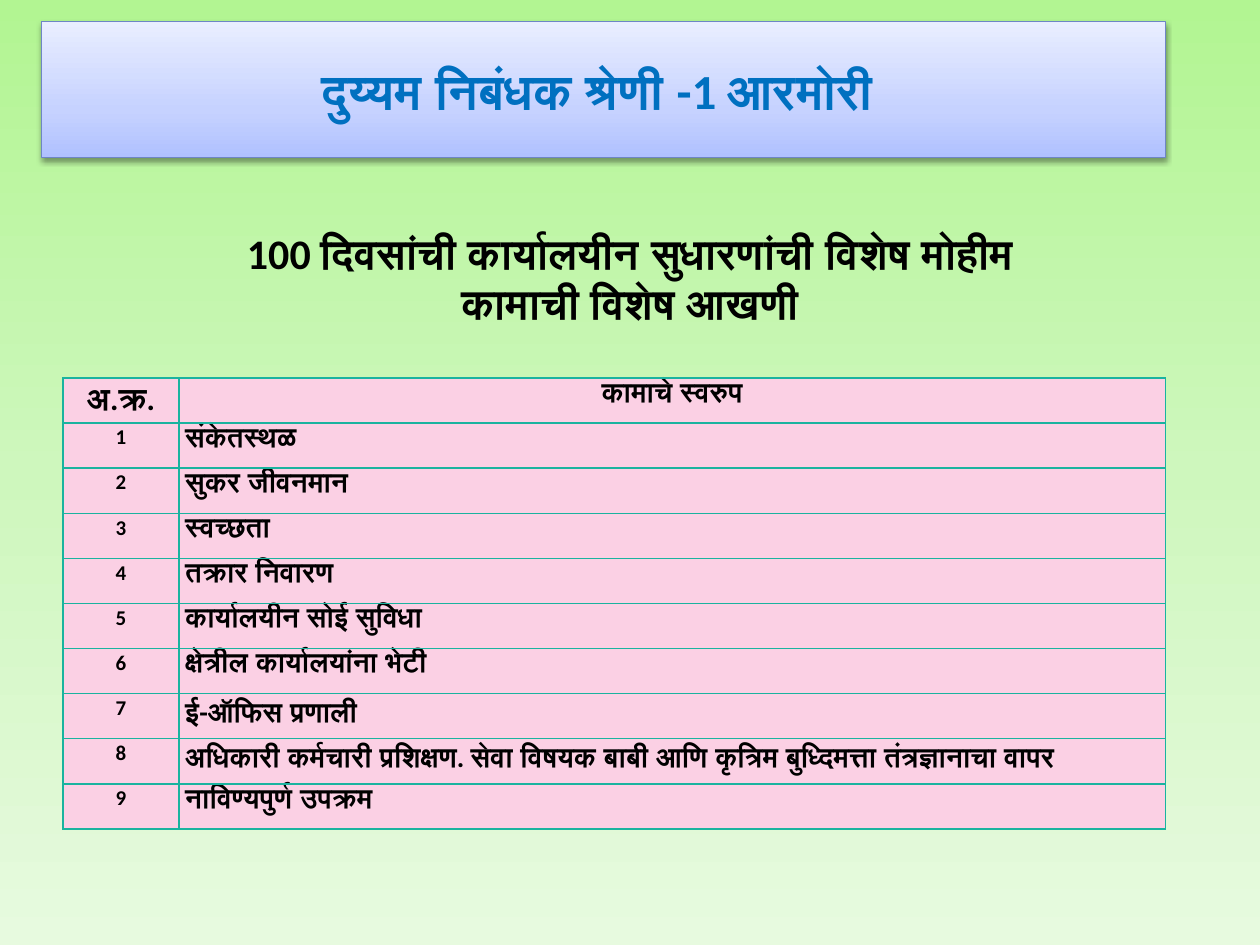
import pptx
import pptx.util
import pptx.dml.color
import pptx.enum.text
import pptx.oxml
import pptx.oxml.ns
from dataclasses import dataclass

Inches = pptx.util.Inches
Pt = pptx.util.Pt
ALIGN = pptx.enum.text.PP_ALIGN
ANCHOR = pptx.enum.text.MSO_ANCHOR
FIT = pptx.enum.text.MSO_AUTO_SIZE


@dataclass(frozen=True)
class Theme:
    """Hold the colours, font and type sizes."""
    font: str = "Calibri"
    ink: str = "000000"
    blue: str = "0070C0"
    edge: str = "6E86C6"
    rule: str = "1AB39F"
    pink: str = "FBD0E4"
    back: tuple = ((0, "B2F592"), (50, "CEF7BD"), (100, "E7FADF"))
    band: tuple = ((0, "B0C1FF"), (35, "C6D2FF"), (100, "E9EEFF"))
    title: int = 28
    sub: int = 24
    key: int = 18
    body: int = 16
    num: int = 12


THEME = Theme()
TITLE = "दुय्यम निबंधक श्रेणी -1 आरमोरी"
LINES = ["100 दिवसांची कार्यालयीन सुधारणांची विशेष मोहीम", "कामाची विशेष आखणी"]
HEADS = ["अ.क्र.", "कामाचे स्वरुप"]
TASKS = [
    "संकेतस्थळ",
    "सुकर जीवनमान",
    "स्वच्छता",
    "तक्रार निवारण",
    "कार्यालयीन सोई सुविधा",
    "क्षेत्रील कार्यालयांना भेटी",
    "ई-ऑफिस प्रणाली",
    "अधिकारी कर्मचारी प्रशिक्षण. सेवा विषयक बाबी आणि कृत्रिम बुध्दिमत्ता तंत्रज्ञानाचा वापर",
    "नाविण्यपुर्ण उपक्रम",
]


def assign(item, vals):
    """Set each attribute named in a dict."""
    for name, val in vals.items():
        setattr(item, name, val)


def color(code):
    """Turn a hex code into a colour."""
    return pptx.dml.color.RGBColor.from_string(code)


def make(text):
    """Parse XML in the drawing namespace."""
    head, tail = text.split(">", 1)
    slash = "/" if head.endswith("/") else ""
    return pptx.oxml.parse_xml(
        f"{head.rstrip('/')} {pptx.oxml.ns.nsdecls('a')}{slash}>{tail}")


def blend(fill, root, stops, angle):
    """Give a fill a gradient with any number of stops."""
    fill.gradient()
    fill.gradient_angle = angle
    holder = root.xpath(".//a:gsLst")[0]
    for stop in list(holder):
        holder.remove(stop)
    for pos, code in stops:
        holder.append(make(
            f'<a:gs pos="{pos * 1000}"><a:srgbClr val="{code}"/></a:gs>'))


def write(frame, lines, size, code, align, space=1.0):
    """Write bold lines, one to a paragraph."""
    frame.text = "\n".join(lines)
    for para in frame.paragraphs:
        assign(para, {"alignment": align, "line_spacing": space,
                      "space_before": Pt(0)})
        for run in para.runs:
            assign(run.font, {"name": THEME.font, "size": Pt(size), "bold": True})
            run.font.color.rgb = color(code)


def banner(slide, box):
    """Place the title in its shaded band."""
    shape = slide.shapes.title
    assign(shape, dict(zip(("left", "top", "width", "height"), box)))
    blend(shape.fill, shape.element, THEME.band, 90)
    shape.line.color.rgb = color(THEME.edge)
    shape.line.width = Pt(0.75)
    shape.element.spPr.append(make(
        f'<a:effectLst><a:outerShdw blurRad="{Pt(3.1)}" dist="{Pt(1.6)}" '
        'dir="5400000" rotWithShape="0"><a:srgbClr val="000000">'
        '<a:alpha val="38000"/></a:srgbClr></a:outerShdw></a:effectLst>'))
    assign(shape.text_frame, {"word_wrap": True, "auto_size": FIT.NONE,
                              "vertical_anchor": ANCHOR.MIDDLE,
                              "margin_right": Inches(0.2)})
    write(shape.text_frame, [TITLE], THEME.title, THEME.blue, ALIGN.CENTER)


def heading(slide, box):
    """Place the two centred lines above the table."""
    frame = slide.shapes.add_textbox(*box).text_frame
    assign(frame, {"word_wrap": True, "auto_size": FIT.SHAPE_TO_FIT_TEXT,
                   "vertical_anchor": ANCHOR.MIDDLE})
    write(frame, LINES, THEME.sub, THEME.ink, ALIGN.CENTER)


def style(cell):
    """Fill a cell, set its margins and rule its sides."""
    assign(cell, {"margin_left": Inches(0.05), "margin_right": Inches(0.05),
                  "margin_top": 0, "margin_bottom": 0,
                  "vertical_anchor": ANCHOR.TOP})
    cell.fill.solid()
    cell.fill.fore_color.rgb = color(THEME.pink)
    props = cell._tc.get_or_add_tcPr()
    for spot, side in enumerate("LRTB"):
        props.insert(spot, make(
            f'<a:ln{side} w="{Pt(1)}"><a:solidFill><a:srgbClr val="{THEME.rule}"/>'
            f'</a:solidFill></a:ln{side}>'))


def tasks(slide, box):
    """Place the numbered table of tasks."""
    rows = [HEADS] + [[str(num), task] for num, task in enumerate(TASKS, 1)]
    table = slide.shapes.add_table(len(rows), len(HEADS), *box).table
    assign(table, {"first_row": False, "horz_banding": False})
    first = Inches(0.92)
    for col, width in zip(table.columns, (first, box[2] - first)):
        col.width = width
    for r, row in enumerate(rows):
        sizes = (THEME.num if r else THEME.key, THEME.body)
        for c, text in enumerate(row):
            cell = table.cell(r, c)
            style(cell)
            align = ALIGN.LEFT if r and c else ALIGN.CENTER
            write(cell.text_frame, [text], sizes[c], THEME.ink, align, 1.07)


def main():
    """Build the slide and save it."""
    deck = pptx.Presentation()
    assign(deck, {"slide_width": Inches(10), "slide_height": Inches(7.5)})
    slide = deck.slides.add_slide(deck.slide_layouts.get_by_name("Title Only"))
    blend(slide.background.fill, slide.element, THEME.back, 270)
    parts = (
        (banner, (0.33, 0.17, 8.92, 1.08)),
        (heading, (0, 1.75, 10, 0.91)),
        (tasks, (0.5, 3, 8.75, 3.58)),
    )
    for build, box in parts:
        build(slide, [Inches(val) for val in box])
    deck.save("out.pptx")


if __name__ == "__main__":
    main()
